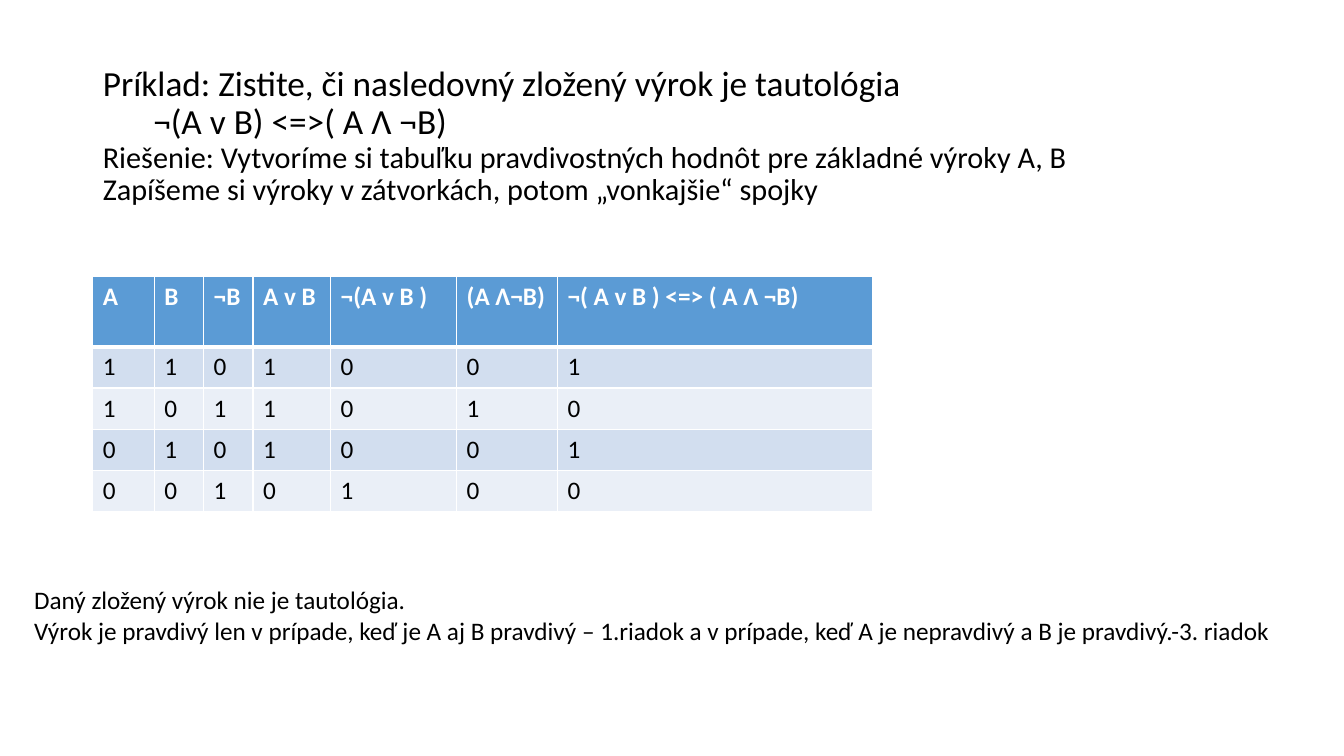
from dataclasses import dataclass

from lxml.etree import SubElement
from pptx import Presentation
from pptx.dml.color import RGBColor
from pptx.enum.text import MSO_ANCHOR as Anchor, MSO_AUTO_SIZE as AutoSize, PP_ALIGN as Align
from pptx.oxml.ns import qn
from pptx.util import Inches, Pt

FONT = "Calibri"
COLORS = {"text": "000000", "white": "FFFFFF", "header": "5B9BD5", "odd": "D2DEEF", "even": "EAEFF7"}


@dataclass(frozen=True)
class Line:
    text: str
    size: float


@dataclass(frozen=True)
class Column:
    heading: str
    width: float
    values: str


TITLE_LINES = [
    Line("Príklad: Zistite, či nasledovný zložený výrok je tautológia", 25.2),
    Line("\t¬(A v B) <=>( A Ʌ ¬B)", 25.2),
    Line("Riešenie: Vytvoríme si tabuľku pravdivostných hodnôt pre základné výroky A, B", 21.6),
    Line("Zapíšeme si výroky v zátvorkách, potom „vonkajšie“ spojky", 21.6),
]
COLUMNS = [
    Column("A", 0.61, "1100"),
    Column("B", 0.49, "1010"),
    Column("¬B", 0.49, "0101"),
    Column("A v B", 0.77, "1110"),
    Column("¬(A v B )", 1.25, "0001"),
    Column("(A Ʌ¬B)", 1, "0100"),
    Column("¬( A v B ) <=> ( A Ʌ ¬B)", 3.13, "1010"),
]
ROW_HEIGHTS = [0.7] + [0.41] * 4
CONCLUSION = [
    "Daný zložený výrok nie je tautológia.",
    "Výrok je pravdivý len v prípade, keď je A aj B pravdivý – 1.riadok "
    "a v prípade, keď A je nepravdivý a B je pravdivý.-3. riadok",
]


def color(name: str) -> RGBColor:
    return RGBColor.from_string(COLORS[name])


def style(para, color_name: str, size: float = 18, bold: bool = False) -> None:
    font = para.font
    font.name, font.size, font.bold = FONT, Pt(size), bold
    font.color.rgb = color(color_name)


def add_borders(cell, bottom: float) -> None:
    properties = cell._tc.get_or_add_tcPr()
    for side, width in (("L", 1), ("R", 1), ("T", 1), ("B", bottom)):
        line = SubElement(properties, qn(f"a:ln{side}"), w=str(Pt(width)))
        fill = SubElement(line, qn("a:solidFill"))
        SubElement(fill, qn("a:srgbClr"), val=COLORS["white"])


def fill_title(page) -> None:
    title = page.shapes.title
    title.left, title.top, title.width, title.height = map(Inches, (0.92, 0.76, 11.5, 1.98))
    frame = title.text_frame
    frame.auto_size = AutoSize.NONE
    frame.word_wrap = True
    frame.vertical_anchor = Anchor.MIDDLE
    frame.margin_bottom = Inches(0.84)
    para = frame.paragraphs[0]
    para.alignment = Align.LEFT
    para.line_spacing = 0.9
    style(para, "text", TITLE_LINES[0].size)
    for index, line in enumerate(TITLE_LINES):
        if index:
            para.add_line_break()
        span = para.add_run()
        span.text = line.text
        span.font.size = Pt(line.size)


def add_truth_table(page) -> None:
    frame = page.shapes.add_table(
        len(ROW_HEIGHTS), len(COLUMNS), Inches(0.92), Inches(2.74),
        Inches(sum(column.width for column in COLUMNS)), Inches(sum(ROW_HEIGHTS)),
    )
    table = frame.table
    for row, height in zip(table.rows, ROW_HEIGHTS):
        row.height = Inches(height)
    for x, column in enumerate(COLUMNS):
        table.columns[x].width = Inches(column.width)
        for y, text in enumerate([column.heading, *column.values]):
            header = y == 0
            cell = table.cell(y, x)
            cell.text = text
            style(cell.text_frame.paragraphs[0], "white" if header else "text", bold=header)
            add_borders(cell, 3 if header else 1)
            cell.fill.solid()
            cell.fill.fore_color.rgb = color("header" if header else "odd" if y % 2 else "even")


def add_conclusion(page) -> None:
    box = page.shapes.add_textbox(Inches(0.24), Inches(5.75), Inches(12.5), Inches(0.71))
    frame = box.text_frame
    frame.word_wrap = False
    frame.auto_size = AutoSize.SHAPE_TO_FIT_TEXT
    frame.text = "\n".join(CONCLUSION)
    for para in frame.paragraphs:
        style(para, "text")


def main() -> None:
    """Build the truth table slide and save it."""
    deck = Presentation()
    deck.slide_width, deck.slide_height = Inches(13.33), Inches(7.5)
    page = deck.slides.add_slide(deck.slide_layouts[5])
    fill_title(page)
    add_truth_table(page)
    add_conclusion(page)
    deck.save("out.pptx")


if __name__ == "__main__":
    main()
